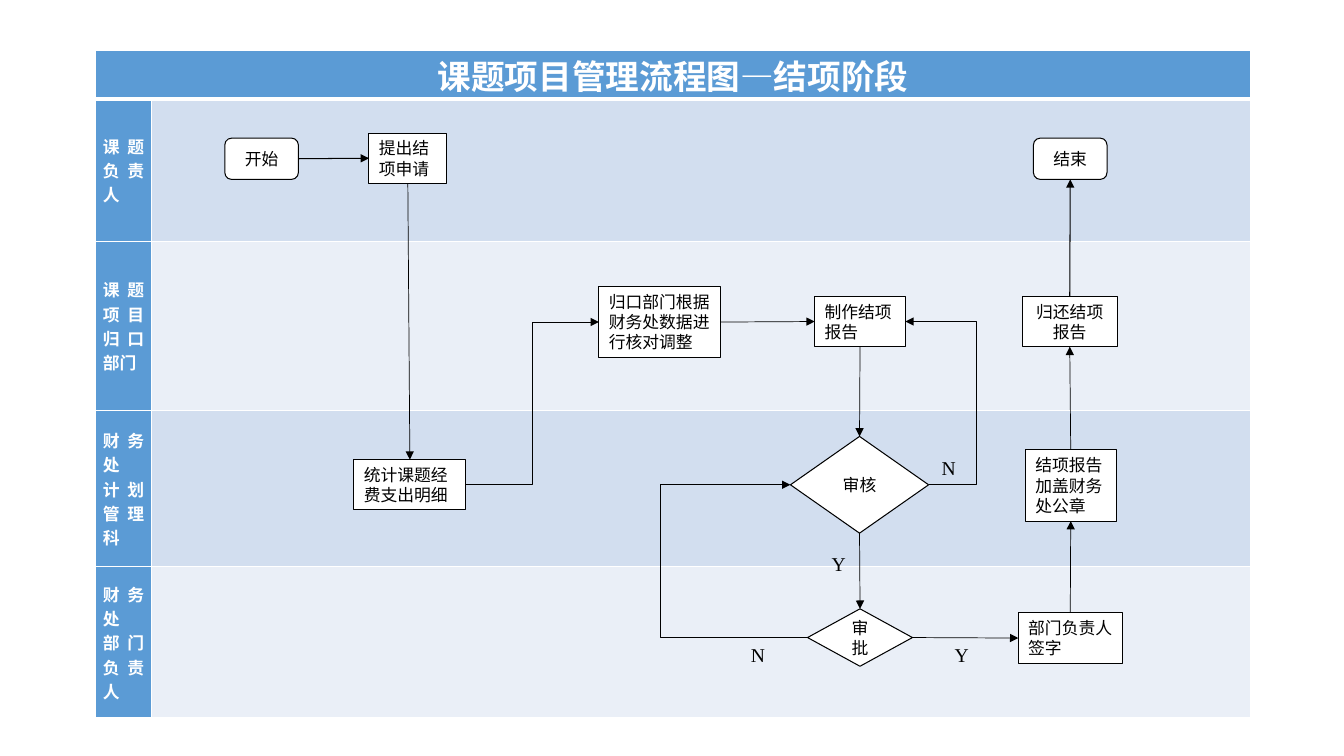
from dataclasses import dataclass

from lxml import etree
from pptx import Presentation
from pptx.dml.color import RGBColor
from pptx.enum.shapes import MSO_CONNECTOR, MSO_SHAPE
from pptx.enum.text import MSO_ANCHOR, PP_ALIGN
from pptx.oxml.ns import qn
from pptx.util import Inches, Pt

RECT = MSO_SHAPE.RECTANGLE
TERMINAL = MSO_SHAPE.FLOWCHART_ALTERNATE_PROCESS
DECISION = MSO_SHAPE.DIAMOND
STRAIGHT, ELBOW = MSO_CONNECTOR.STRAIGHT, MSO_CONNECTOR.ELBOW
LEFT, CENTER, JUSTIFY = PP_ALIGN.LEFT, PP_ALIGN.CENTER, PP_ALIGN.JUSTIFY
TOP, MIDDLE = MSO_ANCHOR.TOP, MSO_ANCHOR.MIDDLE
SITE_TOP, SITE_LEFT, SITE_BOTTOM, SITE_RIGHT = range(4)


@dataclass(frozen=True)
class Theme:
    header: RGBColor = RGBColor(0x5B, 0x9B, 0xD5)
    lane_dark: RGBColor = RGBColor(0xD2, 0xDE, 0xEF)
    lane_light: RGBColor = RGBColor(0xEA, 0xEF, 0xF7)
    white: RGBColor = RGBColor(0xFF, 0xFF, 0xFF)
    black: RGBColor = RGBColor(0, 0, 0)
    table_font: str = "Calibri"
    flow_font: str = "Times New Roman"
    title_size: Pt = Pt(24)
    body_size: Pt = Pt(12)
    branch_size: Pt = Pt(14)
    outline: Pt = Pt(0.75)
    thin: Pt = Pt(0.5)


THEME = Theme()

TITLE = "课题项目管理流程图—结项阶段"
LANES = [
    (["课题负责人"], 1.41),
    (["课题项目归口部门"], 1.68),
    (["财务处", "计划管理科"], 1.55),
    (["财务处", "部门负责人"], 1.5),
]
STEPS = {
    "start": (TERMINAL, "开始", CENTER, 2.23, 1.37, 0.73, 0.41),
    "apply": (RECT, "提出结项申请", LEFT, 3.66, 1.32, 0.77, 0.5),
    "tally": (RECT, "统计课题经费支出明细", LEFT, 3.51, 4.56, 1.11, 0.5),
    "check": (RECT, "归口部门根据财务处数据进行核对调整", LEFT, 5.94, 2.84, 1.21, 0.71),
    "report": (RECT, "制作结项报告", LEFT, 8.08, 2.94, 0.9, 0.5),
    "review": (DECISION, "审核", CENTER, 7.84, 4.33, 1.37, 0.96),
    "approve": (DECISION, "审批", CENTER, 8.01, 6.04, 1.04, 0.57),
    "sign": (RECT, "部门负责人签字", LEFT, 10.1, 6.08, 1.03, 0.5),
    "stamp": (RECT, "结项报告加盖财务处公章", LEFT, 10.17, 4.46, 0.9, 0.71),
    "return": (RECT, "归还结项报告", CENTER, 10.14, 2.94, 0.94, 0.5),
    "end": (TERMINAL, "结束", CENTER, 10.25, 1.37, 0.73, 0.41),
}
FLOWS = [
    ("start", SITE_RIGHT, "apply", SITE_LEFT, THEME.outline, None),
    ("apply", SITE_BOTTOM, "tally", SITE_TOP, THEME.thin, None),
    ("tally", SITE_RIGHT, "check", SITE_LEFT, THEME.thin, 5.28),
    ("check", SITE_RIGHT, "report", SITE_LEFT, THEME.thin, None),
    ("report", SITE_BOTTOM, "review", SITE_TOP, THEME.thin, None),
    ("review", SITE_RIGHT, "report", SITE_RIGHT, THEME.thin, 9.68),
    ("review", SITE_BOTTOM, "approve", SITE_TOP, THEME.thin, None),
    ("approve", SITE_LEFT, "review", SITE_LEFT, THEME.thin, 6.55),
    ("approve", SITE_RIGHT, "sign", SITE_LEFT, THEME.thin, None),
    ("sign", SITE_TOP, "stamp", SITE_BOTTOM, THEME.thin, None),
    ("stamp", SITE_TOP, "return", SITE_BOTTOM, THEME.thin, None),
    ("return", SITE_TOP, "end", SITE_BOTTOM, THEME.outline, None),
]
BRANCHES = [
    ("N", 9.24, 4.47, 0.45),
    ("Y", 8.15, 5.43, 0.51),
    ("N", 7.35, 6.33, 0.5),
    ("Y", 9.37, 6.33, 0.41),
]


def set_format(target, values):
    for name, value in values.items():
        setattr(target, name, value)


def write(frame, lines, align, color, **font):
    frame.text = "\n".join(lines)
    for paragraph in frame.paragraphs:
        paragraph.alignment = align
        run = paragraph.runs[0]
        set_format(run.font, font)
        run.font.color.rgb = color


def style_cell(cell, fill, bottom=1):
    margins = {
        "margin_left": Inches(0.07), "margin_right": Inches(0.07),
        "margin_top": 0, "margin_bottom": 0,
    }
    set_format(cell, margins)
    properties = cell._tc.get_or_add_tcPr()
    for side, points in (("L", 1), ("R", 1), ("T", 1), ("B", bottom)):
        border = etree.SubElement(properties, qn(f"a:ln{side}"), w=str(Pt(points)))
        solid = etree.SubElement(border, qn("a:solidFill"))
        etree.SubElement(solid, qn("a:srgbClr"), val=str(THEME.white))
    cell.fill.solid()
    cell.fill.fore_color.rgb = fill


def add_lanes(slide):
    heights = [0.4] + [height for _, height in LANES]
    table = slide.shapes.add_table(
        len(heights), 2, Inches(0.95), Inches(0.5), Inches(11.45), Inches(sum(heights))
    ).table
    for column, width in zip(table.columns, (0.55, 10.9)):
        column.width = Inches(width)
    for row, height in zip(table.rows, heights):
        row.height = Inches(height)
    for cell in table.rows[0].cells:
        style_cell(cell, THEME.header, bottom=3)
    title = table.cell(0, 0)
    title.merge(table.cell(0, 1))
    title.vertical_anchor = TOP
    write(title.text_frame, [TITLE], CENTER, THEME.white,
          name=THEME.table_font, size=THEME.title_size, bold=True)
    for index, (names, _) in enumerate(LANES, start=1):
        label, lane = table.rows[index].cells
        style_cell(label, THEME.header)
        style_cell(lane, THEME.lane_dark if index % 2 else THEME.lane_light)
        label.vertical_anchor = MIDDLE
        label._tc.tcPr.set("vert", "eaVert")
        write(label.text_frame, names, JUSTIFY, THEME.white,
              name=THEME.table_font, size=THEME.body_size, bold=True)


def add_step(slide, kind, text, align, *box):
    step = slide.shapes.add_shape(kind, *map(Inches, box))
    step.shadow.inherit = False
    step.fill.solid()
    step.fill.fore_color.rgb = THEME.white
    step.line.color.rgb = THEME.black
    step.line.width = THEME.outline
    set_format(step.text_frame, {"word_wrap": True, "vertical_anchor": MIDDLE})
    write(step.text_frame, [text], align, THEME.black,
          name=THEME.flow_font, size=THEME.body_size)
    return step


def add_flow(slide, source, source_site, target, target_site, width, via):
    flow = slide.shapes.add_connector(STRAIGHT if via is None else ELBOW, 0, 0, 0, 0)
    flow.begin_connect(source, source_site)
    flow.end_connect(target, target_site)
    flow.line.color.rgb = THEME.black
    flow.line.width = width
    etree.SubElement(flow.line._get_or_add_ln(), qn("a:tailEnd"), type="triangle")
    properties = flow._element.spPr
    etree.SubElement(properties, qn("a:effectLst"))
    if via is not None:
        bend = (Inches(via) - flow.begin_x) / (flow.end_x - flow.begin_x)
        guides = properties.find(qn("a:prstGeom")).get_or_add_avLst()
        etree.SubElement(guides, qn("a:gd"), name="adj1", fmla=f"val {round(bend * 100000)}")


def add_branch(slide, text, left, top, width):
    branch = slide.shapes.add_textbox(*map(Inches, (left, top, width, 0.34)))
    branch.text_frame.word_wrap = True
    write(branch.text_frame, [text], LEFT, THEME.black,
          name=THEME.flow_font, size=THEME.branch_size)


def main():
    deck = Presentation()
    set_format(deck, {"slide_width": Inches(13.33), "slide_height": Inches(7.5)})
    slide = deck.slides.add_slide(deck.slide_layouts[6])
    add_lanes(slide)
    steps = {key: add_step(slide, *step) for key, step in STEPS.items()}
    for source, source_site, target, target_site, width, via in FLOWS:
        add_flow(slide, steps[source], source_site, steps[target], target_site, width, via)
    for branch in BRANCHES:
        add_branch(slide, *branch)
    deck.save("out.pptx")


if __name__ == "__main__":
    main()
